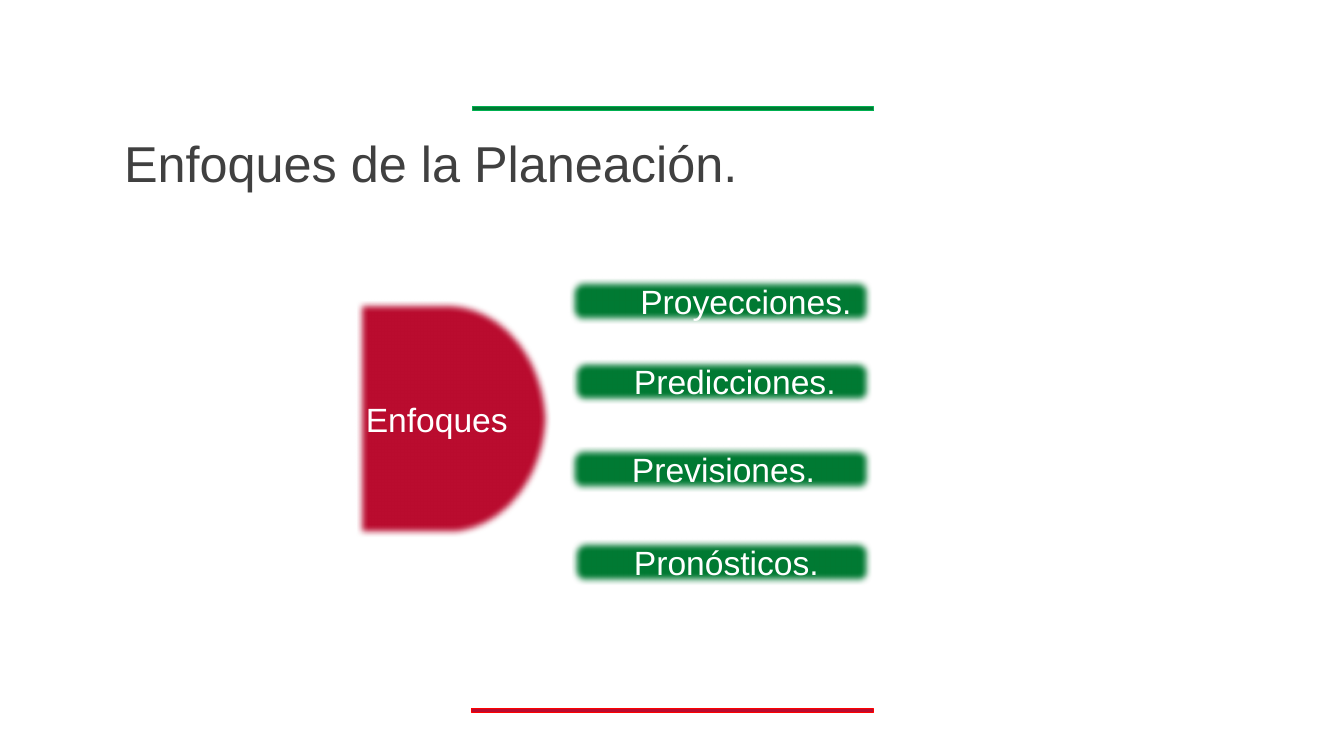
from dataclasses import dataclass

from lxml.etree import SubElement
from pptx import Presentation
from pptx.dml.color import RGBColor as RGB
from pptx.enum.shapes import MSO_SHAPE as Shape
from pptx.enum.text import MSO_ANCHOR as Anchor, MSO_AUTO_SIZE as AutoSize, PP_ALIGN as Align
from pptx.oxml.ns import qn
from pptx.util import Pt


@dataclass(frozen=True)
class Theme:
    font: str = "Arial"
    title_size: float = 36
    label_size: float = 24
    title: RGB = RGB(0x40, 0x40, 0x40)
    white: RGB = RGB(0xFF, 0xFF, 0xFF)
    red: RGB = RGB(0xBA, 0x0C, 0x2F)
    green: RGB = RGB(0x00, 0x7A, 0x33)
    red_line: RGB = RGB(0xFF, 0x00, 0x00)
    green_line: RGB = RGB(0x00, 0xB0, 0x50)


@dataclass(frozen=True)
class Box:
    left: float
    top: float
    width: float
    height: float
    fill: RGB
    line: RGB
    line_width: float = 1
    kind: Shape = Shape.ROUNDED_RECTANGLE
    text: str = ""
    align: Align = Align.LEFT
    indent: float = 0


THEME = Theme()
SOFT_EDGE = Pt(5)

# Bars above and below the content
BARS = [
    Box(337, 506.2, 286.5, 2.9, THEME.red, THEME.red_line, 0.5, Shape.RECTANGLE),
    Box(337.7, 76.3, 286.5, 2.9, THEME.green, THEME.green_line, 0.5, Shape.RECTANGLE),
]

# Main concept and its four approaches, sharing a right edge
CONCEPT = Box(254.2, 214.6, 139, 169.2, THEME.red, THEME.white,
              kind=Shape.FLOWCHART_DELAY, text="Enfoques")
RIGHT_EDGE = 622.8
APPROACHES = [
    Box(left, top, RIGHT_EDGE - left, 32.4, THEME.green, THEME.white,
        text=text, align=align, indent=36)
    for text, left, top, align in [
        ("Proyecciones.", 406.8, 198.7, Align.CENTER),
        ("Predicciones.", 408.2, 256.3, Align.LEFT),
        ("Previsiones.", 406.8, 319, Align.LEFT),
        ("Pronósticos.", 408.2, 385.2, Align.LEFT),
    ]
]


def add_title(s, text: str) -> None:
    sp = s.shapes.title
    sp.left, sp.top, sp.width, sp.height = Pt(81.4), Pt(66.2), Pt(830.2), Pt(104.4)
    tf = sp.text_frame
    tf.text = text
    tf.auto_size = AutoSize.NONE
    tf.vertical_anchor = Anchor.MIDDLE
    p = tf.paragraphs[0]
    p.alignment = Align.LEFT
    p.line_spacing = 0.9
    style(p, THEME.title_size, THEME.title)


def style(p, size: float, color: RGB) -> None:
    p.font.name = THEME.font
    p.font.size = Pt(size)
    p.font.color.rgb = color


def add_box(s, box: Box) -> None:
    sp = s.shapes.add_shape(box.kind, Pt(box.left), Pt(box.top), Pt(box.width), Pt(box.height))
    sp.shadow.inherit = False
    sp.fill.solid()
    sp.fill.fore_color.rgb = box.fill
    sp.line.color.rgb = box.line
    sp.line.width = Pt(box.line_width)
    if not box.text:
        return
    # Labelled shapes have soft edges
    effects = sp._element.spPr.find(qn("a:effectLst"))
    SubElement(effects, qn("a:softEdge"), rad=str(SOFT_EDGE))
    tf = sp.text_frame
    tf.text = box.text
    tf.word_wrap = True
    tf.vertical_anchor = Anchor.MIDDLE
    p = tf.paragraphs[0]
    p.alignment = box.align
    if box.indent:
        p.level = 1
        pPr = p._p.get_or_add_pPr()
        pPr.set("marL", str(Pt(box.indent)))
        pPr.set("indent", "0")
    style(p, THEME.label_size, THEME.white)


def main() -> None:
    prs = Presentation()
    prs.slide_width, prs.slide_height = Pt(960), Pt(540)
    s = prs.slides.add_slide(prs.slide_layouts[5])
    add_title(s, "Enfoques de la Planeación.")
    for box in [*BARS, CONCEPT, *APPROACHES]:
        add_box(s, box)
    prs.save("out.pptx")


if __name__ == "__main__":
    main()
